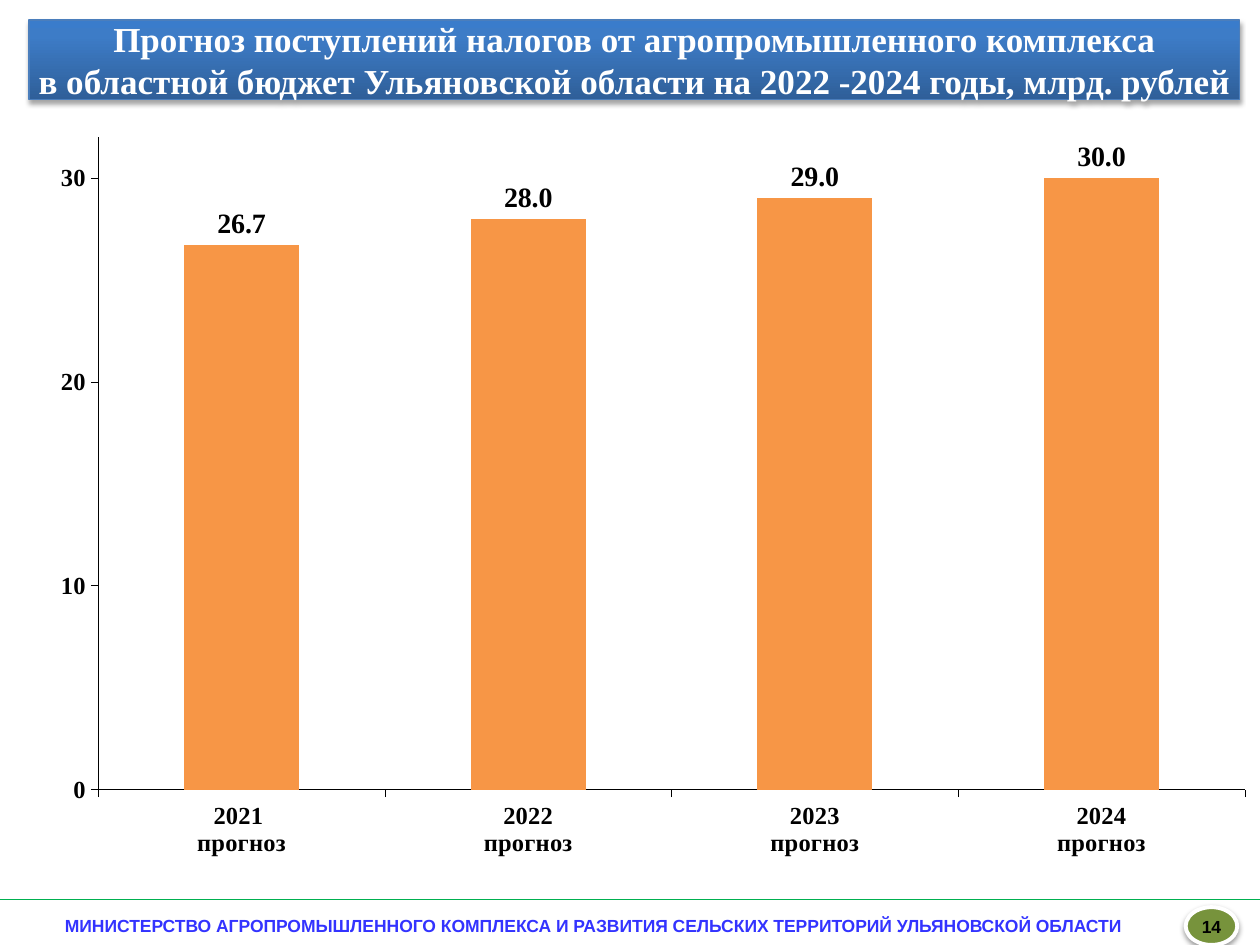
"""Builds the slide with the forecast of agricultural tax revenue."""
from lxml import etree
from pptx import Presentation
from pptx.chart.data import CategoryChartData
from pptx.dml.color import RGBColor
from pptx.enum.chart import XL_CHART_TYPE as ChartType, XL_LABEL_POSITION as LabelPosition, XL_TICK_MARK as TickMark
from pptx.enum.shapes import MSO_CONNECTOR as Connector, MSO_SHAPE as Shape
from pptx.enum.text import MSO_ANCHOR as Anchor, MSO_AUTO_SIZE as AutoSize, PP_ALIGN as Align
from pptx.oxml import parse_xml
from pptx.util import Inches, Pt

NAMESPACE = "http://schemas.openxmlformats.org/drawingml/2006/main"
CHART_NAMESPACE = "http://schemas.openxmlformats.org/drawingml/2006/chart"
SERIF, SANS = "Times New Roman", "Arial"
color = RGBColor.from_string


def write_text(shape, text, size, font, fill, side=0.1, anchor=Anchor.TOP):
    """Fills a shape with bold centred lines."""
    frame = shape.text_frame
    frame.word_wrap = True
    frame.vertical_anchor = anchor
    frame.margin_left = frame.margin_right = Inches(side)
    frame.text = text
    for paragraph in frame.paragraphs:
        paragraph.alignment = Align.CENTER
        face = paragraph.runs[0].font
        face.size, face.name, face.bold = Pt(size), font, True
        face.color.rgb = color(fill)


def style_shape(shape, line, width, alpha, distance):
    """Sets the outline and a soft shadow that falls downwards."""
    shape.line.color.rgb = color(line)
    shape.line.width = Pt(width)
    shape.shadow.inherit = False
    effects = shape._element.spPr.find(f"{{{NAMESPACE}}}effectLst")
    effects.append(parse_xml(
        f'<a:outerShdw xmlns:a="{NAMESPACE}" blurRad="{Pt(3.1)}" dist="{Pt(distance)}" dir="5400000" '
        f'rotWithShape="0"><a:srgbClr val="000000"><a:alpha val="{alpha * 1000}"/></a:srgbClr></a:outerShdw>'))


presentation = Presentation()
presentation.slide_width, presentation.slide_height = Inches(10), Inches(7.5)
slide = presentation.slides.add_slide(presentation.slide_layouts[6])
shapes = slide.shapes

rule = shapes.add_connector(Connector.STRAIGHT, 0, Inches(7.14), presentation.slide_width, Inches(7.14))
rule.line.color.rgb = color("00B050")
rule.line.width = Pt(1)
etree.SubElement(rule._element.spPr, f"{{{NAMESPACE}}}effectLst")

footer = shapes.add_textbox(Inches(-0.16), Inches(7.21), Inches(9.77), Inches(0.27))
write_text(footer, "МИНИСТЕРСТВО АГРОПРОМЫШЛЕННОГО КОМПЛЕКСА И РАЗВИТИЯ СЕЛЬСКИХ ТЕРРИТОРИЙ УЛЬЯНОВСКОЙ ОБЛАСТИ ",
           10, SANS, "3333FF")
footer.text_frame.auto_size = AutoSize.SHAPE_TO_FIT_TEXT

badge = shapes.add_shape(Shape.OVAL, Inches(9.41), Inches(7.2), Inches(0.41), Inches(0.3))
badge.fill.solid()
badge.fill.fore_color.rgb = color("77933C")
style_shape(badge, "FFFFFF", 2.25, alpha=38, distance=1.6)
write_text(badge, "14", 10, SANS, "000000", side=0, anchor=Anchor.MIDDLE)

title = shapes.add_shape(Shape.RECTANGLE, Inches(0.23), Inches(0.16), Inches(9.61), Inches(0.63))
stops = "".join(f'<a:gs pos="{share * 1000}"><a:srgbClr val="{shade}"/></a:gs>'
                for share, shade in [(0, "2F5F99"), (80, "3D7CC7"), (100, "3A7CCB")])
title._element.spPr.append(parse_xml(
    f'<a:gradFill xmlns:a="{NAMESPACE}" rotWithShape="1"><a:gsLst>{stops}</a:gsLst>'
    '<a:lin ang="16200000" scaled="0"/></a:gradFill>'))
style_shape(title, "4B7EBC", 0.75, alpha=35, distance=1.8)
write_text(title, "Прогноз поступлений налогов от агропромышленного комплекса\n"
           "в областной бюджет Ульяновской области на 2022 -2024 годы, млрд. рублей",
           20, SERIF, "FFFFFF", side=0.04, anchor=Anchor.MIDDLE)

data = CategoryChartData()
data.categories = ["2021 \nпрогноз", "2022\nпрогноз", "2023\nпрогноз", "2024\nпрогноз"]
data.add_series("Series 1", [26.7, 28, 29, 30])
chart = shapes.add_chart(ChartType.COLUMN_CLUSTERED, 0, Inches(-0.06), Inches(10), Inches(7.56), data).chart
chart.has_title = chart.has_legend = False
chart.font.name, chart.font.size, chart.font.bold = SANS, Pt(20.6), True
chart.font.color.rgb = color("000000")

plot = chart.plots[0]
plot.gap_width = 150
plot.vary_by_categories = False
columns = plot.series[0]
columns.format.fill.solid()
columns.format.fill.fore_color.rgb = color("F79646")
labels = columns.data_labels
labels.show_value = True
labels.position = LabelPosition.OUTSIDE_END
labels.number_format, labels.number_format_is_linked = "#,##0.0", False

for axis in (chart.category_axis, chart.value_axis):
    axis.has_major_gridlines = False
    axis.major_tick_mark, axis.minor_tick_mark = TickMark.OUTSIDE, TickMark.NONE
    axis.format.line.color.rgb = color("000000")
    axis.format.line.width = Pt(0.25)
for part, size in ((chart.category_axis.tick_labels, 14), (chart.value_axis.tick_labels, 14), (labels, 16)):
    part.font.name, part.font.size, part.font.bold = SERIF, Pt(size), True
    part.font.color.rgb = color("000000")

values = chart.value_axis
values.minimum_scale, values.maximum_scale, values.major_unit = 0, 32, 10
values.tick_labels.number_format, values.tick_labels.number_format_is_linked = "0", False

area = chart._chartSpace.chart.plotArea
for old in area.findall(f"{{{CHART_NAMESPACE}}}layout"):
    area.remove(old)
settings = [("layoutTarget", "inner"), ("xMode", "edge"), ("yMode", "edge"),
            ("x", 0.078), ("y", 0.152), ("w", 0.91), ("h", 0.685)]
entries = "".join(f'<c:{name} val="{value}"/>' for name, value in settings)
area.insert(0, parse_xml(f'<c:layout xmlns:c="{CHART_NAMESPACE}"><c:manualLayout>{entries}</c:manualLayout></c:layout>'))

presentation.save("out.pptx")
